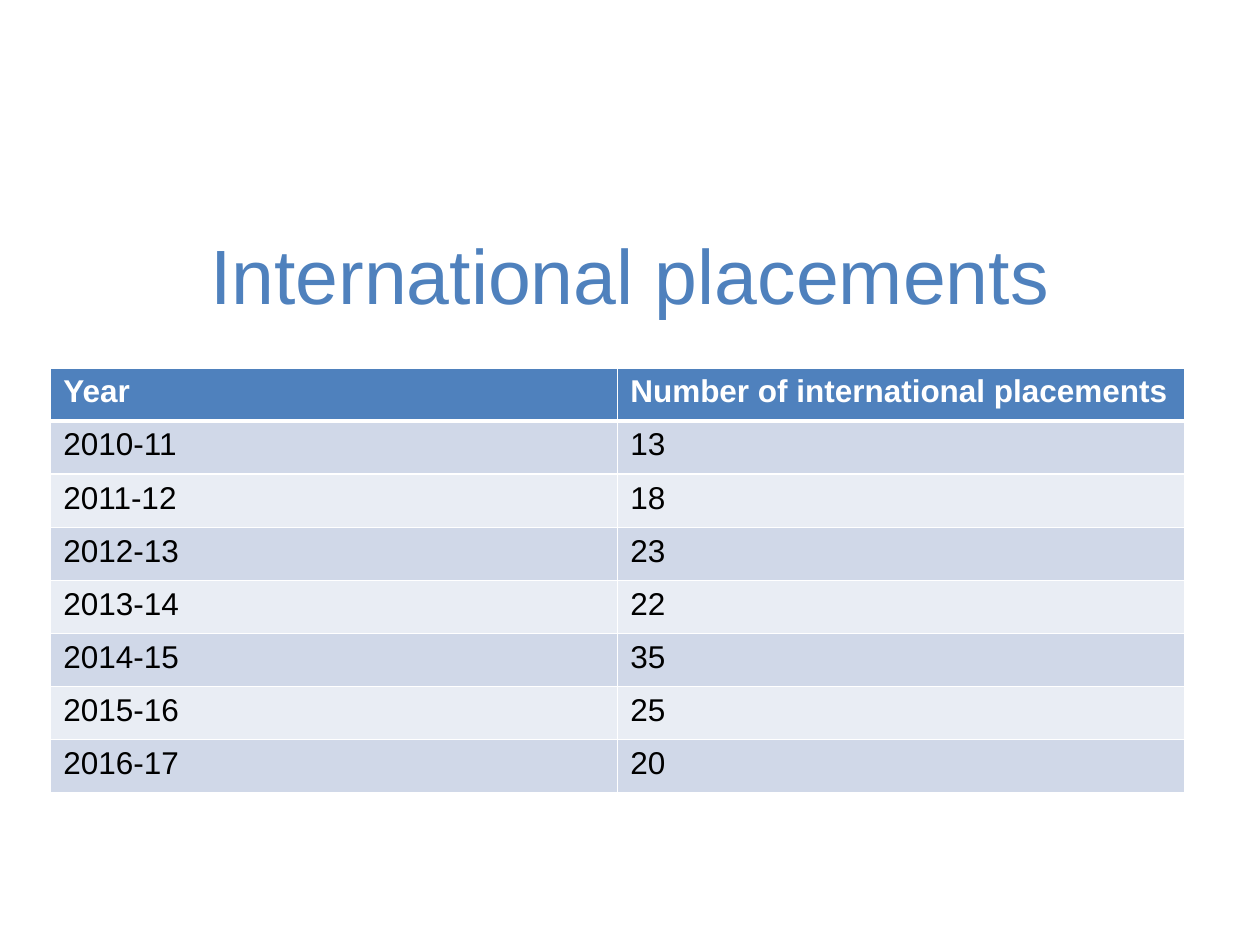
from lxml.etree import SubElement
from pptx import Presentation
from pptx.dml.color import RGBColor
from pptx.enum.text import MSO_ANCHOR, PP_ALIGN
from pptx.oxml.ns import qn
from pptx.util import Pt

TITLE = "International placements"
ROWS = [
    ("Year", "Number of international placements"),
    ("2010-11", "13"),
    ("2011-12", "18"),
    ("2012-13", "23"),
    ("2013-14", "22"),
    ("2014-15", "35"),
    ("2015-16", "25"),
    ("2016-17", "20"),
]
BLUE = RGBColor(0x4F, 0x81, 0xBD)
WHITE = RGBColor(0xFF, 0xFF, 0xFF)
BLACK = RGBColor(0, 0, 0)
BANDS = RGBColor(0xE9, 0xED, 0xF4), RGBColor(0xD0, 0xD8, 0xE8)

HEAD = {"name": "Arial", "size": Pt(44), "color": BLUE}
LABEL = {"name": "Arial", "size": Pt(18), "bold": True, "color": WHITE}
BODY = {**LABEL, "bold": False, "color": BLACK}
WIDE, HIGH = 324, 30.35


def style(font, form):
    for key, value in form.items():
        if key == "color":
            font.color.rgb = value
        else:
            setattr(font, key, value)


def write(frame, text, form):
    para = frame.paragraphs[0]
    run = para.add_run()
    run.text = text
    style(run.font, form)
    return para


def border(cell, widths):
    props = cell._tc.get_or_add_tcPr()
    for side, width in widths.items():
        line = SubElement(props, qn(f"a:ln{side}"), w=str(Pt(width)))
        fill = SubElement(line, qn("a:solidFill"))
        SubElement(fill, qn("a:srgbClr"), val=str(WHITE))


def add_title(slide):
    box = slide.shapes.add_textbox(Pt(36.7), Pt(111.6), Pt(646.6), Pt(90))
    frame = box.text_frame
    frame.word_wrap = True
    frame.vertical_anchor = MSO_ANCHOR.MIDDLE
    write(frame, TITLE, HEAD).alignment = PP_ALIGN.CENTER


def add_grid(slide):
    count = len(ROWS)
    table = slide.shapes.add_table(
        count, 2, Pt(29), Pt(210.3), Pt(2 * WIDE), Pt(count * HIGH)
    ).table
    for col in table.columns:
        col.width = Pt(WIDE)
    for r, row in enumerate(ROWS):
        table.rows[r].height = Pt(HIGH)
        for c, text in enumerate(row):
            cell = table.cell(r, c)
            top, base = 3 if r == 1 else 1, 3 if r == 0 else 1
            border(cell, {"L": 1, "R": 1, "T": top, "B": base})
            cell.fill.solid()
            cell.fill.fore_color.rgb = BANDS[r % 2] if r else BLUE
            write(cell.text_frame, text, BODY if r else LABEL)


def main():
    deck = Presentation()
    deck.slide_width, deck.slide_height = Pt(720), Pt(540)
    slide = deck.slides.add_slide(deck.slide_layouts[6])
    add_title(slide)
    add_grid(slide)
    deck.save("out.pptx")


if __name__ == "__main__":
    main()
